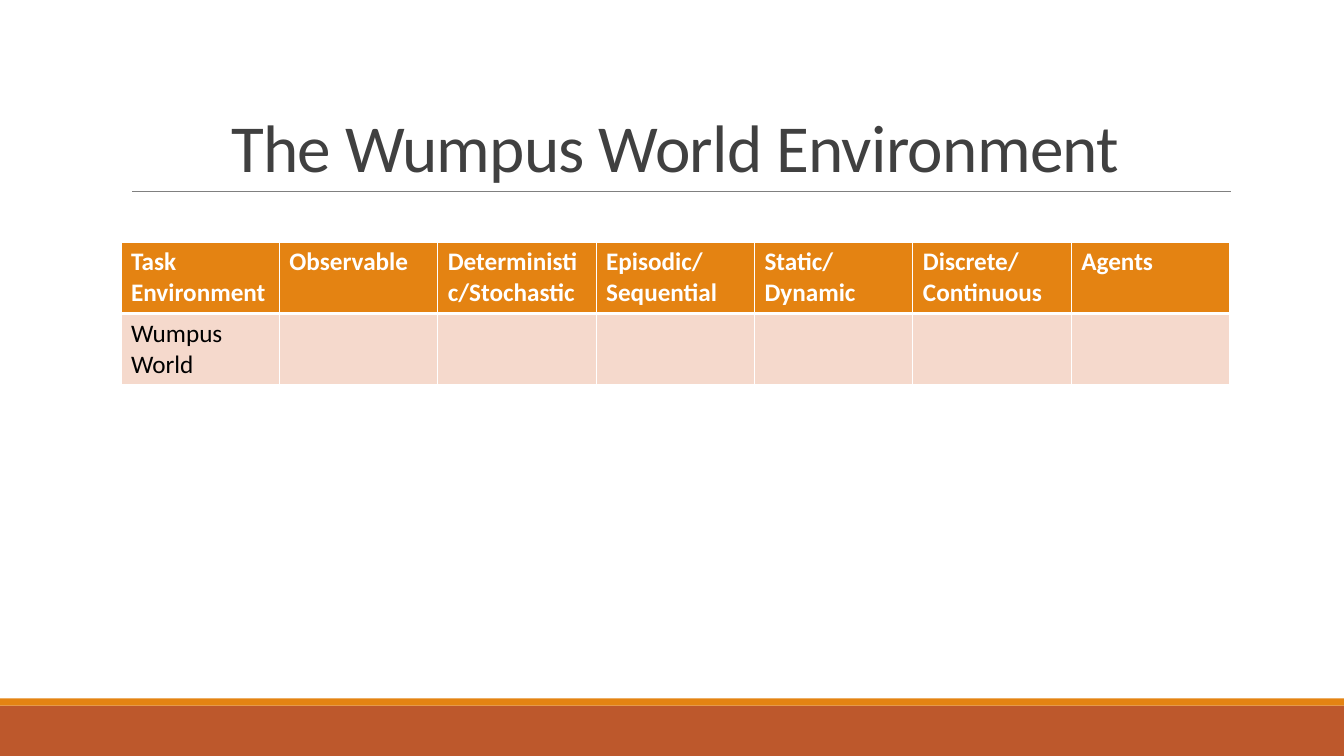
from dataclasses import dataclass

from lxml.etree import SubElement
from pptx import Presentation
from pptx.dml.color import RGBColor
from pptx.enum.shapes import MSO_CONNECTOR as Connector, MSO_SHAPE as Shape
from pptx.enum.text import MSO_ANCHOR as Anchor, PP_ALIGN as Align
from pptx.oxml import parse_xml
from pptx.oxml.ns import nsdecls, qn
from pptx.slide import Slide
from pptx.table import _Cell as Cell
from pptx.util import Inches, Length, Pt

FONT = "Calibri"
ORANGE, RUST, PINK = "E48312", "BD582C", "F5D9CC"
WHITE, BLACK, DARK_GREY, GREY = "FFFFFF", "000000", "404040", "808080"
COLUMNS, ROWS = 133.33, 75  # slide grid with a pitch of a tenth of an inch


@dataclass(frozen=True)
class Band:
    top: float
    height: float
    fill: str


@dataclass(frozen=True)
class TableRow:
    texts: tuple[str, ...]
    fill: str
    color: str
    bold: bool
    bottom_border: float


FOOTER_BANDS = (Band(70, 5, RUST), Band(69.3, 0.7, ORANGE))
TABLE_ROWS = (
    TableRow(
        ("Task Environment", "Observable", "Deterministic/Stochastic",
         "Episodic/Sequential", "Static/Dynamic", "Discrete/Continuous", "Agents"),
        ORANGE, WHITE, True, 3),
    TableRow(("Wumpus World",) + ("",) * 6, PINK, BLACK, False, 1),
)


def grid(units: float) -> Length:
    """Convert grid columns or rows to a length."""
    return Inches(units / 10)


def rgb(color: str) -> RGBColor:
    return RGBColor.from_string(color)


def add_band(slide: Slide, band: Band) -> None:
    shape = slide.shapes.add_shape(
        Shape.RECTANGLE, 0, grid(band.top), grid(COLUMNS), grid(band.height))
    shape.shadow.inherit = False
    shape.fill.solid()
    shape.fill.fore_color.rgb = rgb(band.fill)
    shape.line.fill.background()


def add_title_rule(slide: Slide) -> None:
    rule = slide.shapes.add_connector(
        Connector.STRAIGHT, grid(13.1), grid(19), grid(122.1), grid(19))
    rule.line.color.rgb = rgb(GREY)
    rule.line.width = Pt(0.5)
    SubElement(rule._element.spPr, qn("a:effectLst"))


def add_title(slide: Slide, text: str) -> None:
    box = slide.shapes.add_textbox(grid(12), grid(3.1), grid(110), grid(15.9))
    frame = box.text_frame
    frame.word_wrap = True
    frame.vertical_anchor = Anchor.BOTTOM
    paragraph = frame.paragraphs[0]
    paragraph.text = text
    paragraph.alignment = Align.CENTER
    paragraph.line_spacing = 0.85
    font = paragraph.font
    font.name, font.size, font.color.rgb = FONT, Pt(48), rgb(DARK_GREY)
    paragraph._p.pPr.find(qn("a:defRPr")).set("spc", "-50")


def set_borders(cell: Cell, top: float, bottom: float) -> None:
    """Draw white borders, with side lines of one point."""
    properties = cell._tc.get_or_add_tcPr()
    widths = {"lnL": 1, "lnR": 1, "lnT": top, "lnB": bottom}
    for index, (side, width) in enumerate(widths.items()):
        properties.insert(index, parse_xml(
            f'<a:{side} {nsdecls("a")} w="{Pt(width)}"><a:solidFill>'
            f'<a:srgbClr val="{WHITE}"/></a:solidFill></a:{side}>'))


def add_environment_table(slide: Slide, rows: tuple[TableRow, ...]) -> None:
    table = slide.shapes.add_table(
        len(rows), len(rows[0].texts),
        grid(12), grid(24), grid(110), grid(7.1 * len(rows))).table
    top_border = 1
    for row_index, row in enumerate(rows):
        for column_index, text in enumerate(row.texts):
            cell = table.cell(row_index, column_index)
            cell.fill.solid()
            cell.fill.fore_color.rgb = rgb(row.fill)
            set_borders(cell, top_border, row.bottom_border)
            paragraph = cell.text_frame.paragraphs[0]
            paragraph.text = text
            font = paragraph.font
            font.name, font.size, font.bold = FONT, Pt(18), row.bold
            font.color.rgb = rgb(row.color)
        top_border = row.bottom_border


def main() -> None:
    presentation = Presentation()
    presentation.slide_width, presentation.slide_height = grid(COLUMNS), grid(ROWS)
    slide = presentation.slides.add_slide(presentation.slide_layouts[6])
    for band in FOOTER_BANDS:
        add_band(slide, band)
    add_title_rule(slide)
    add_title(slide, "The Wumpus World Environment")
    add_environment_table(slide, TABLE_ROWS)
    presentation.save("out.pptx")


if __name__ == "__main__":
    main()
